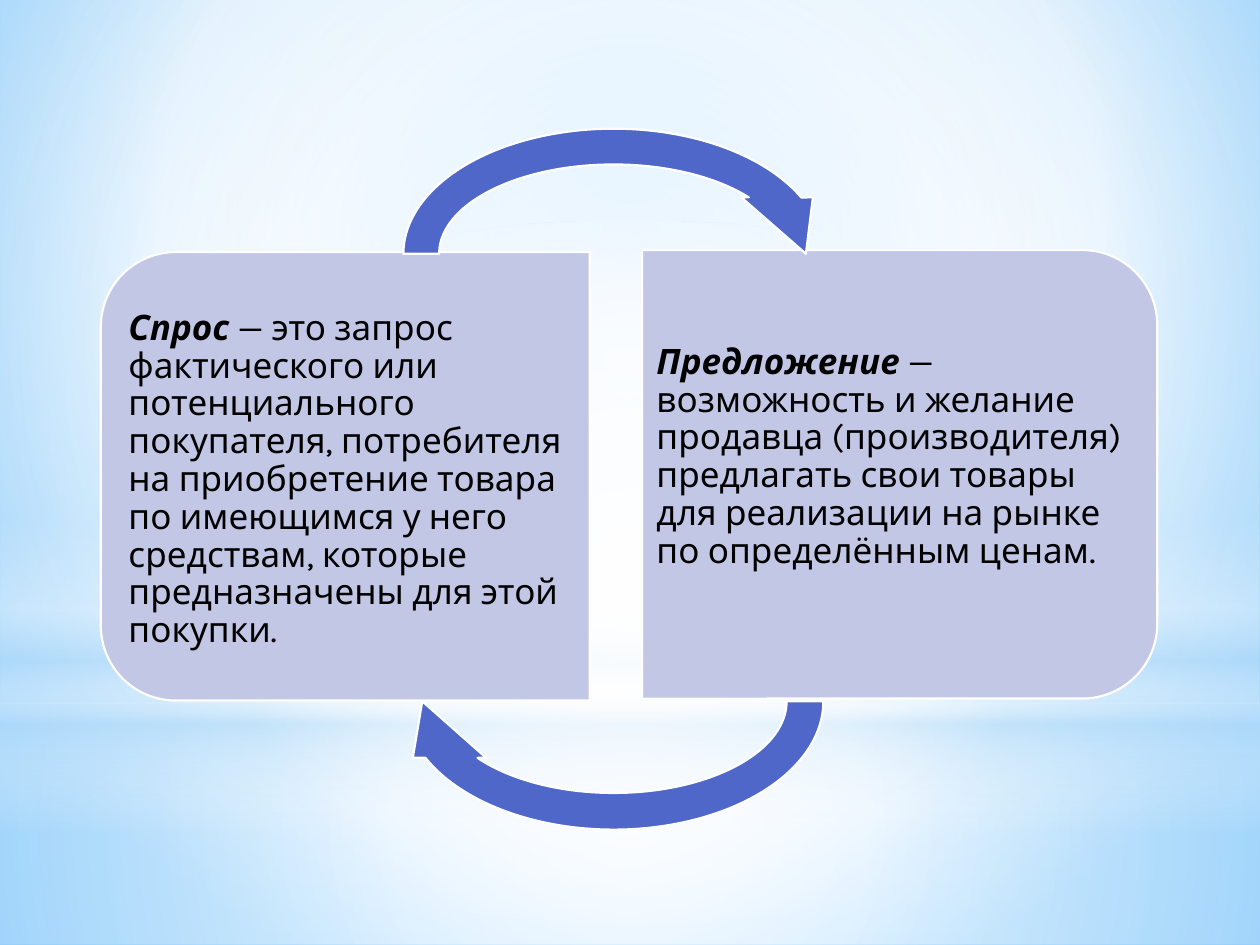
from dataclasses import dataclass

from lxml.etree import SubElement
from pptx import Presentation
from pptx.dml.color import RGBColor
from pptx.enum.shapes import MSO_SHAPE
from pptx.enum.text import MSO_ANCHOR, PP_ALIGN
from pptx.oxml.ns import qn
from pptx.util import Inches, Pt

COLUMNS, ROWS = 100, 75
CELL_WIDTH = Inches(10) / COLUMNS
CELL_HEIGHT = Inches(7.5) / ROWS


@dataclass(frozen=True)
class Theme:
    font: str = "Karla"
    text_size: int = 20
    text: str = "000000"
    panel: str = "C2C7E6"
    arrow: str = "4E67C8"
    white: str = "FFFFFF"
    haze: str = "B4DCFA"
    sky: str = "9ED5FF"
    deep_sky: str = "5BB9FF"
    line_width: float = 1.25


THEME = Theme()
CENTER = (50, 50, 50, 50)


def grid_box(left, top, width, height):
    return (
        int(left * CELL_WIDTH),
        int(top * CELL_HEIGHT),
        int(width * CELL_WIDTH),
        int(height * CELL_HEIGHT),
    )


def apply_gradient(fill, owner, stops, focus=None):
    fill.gradient()
    gradient = next(owner.iter(qn("a:gradFill")))
    gradient.clear()
    stop_list = SubElement(gradient, qn("a:gsLst"))
    for position, color, opacity in stops:
        stop = SubElement(stop_list, qn("a:gs"), pos=str(position * 1000))
        shade = SubElement(stop, qn("a:srgbClr"), val=color)
        if opacity < 100:
            SubElement(shade, qn("a:alpha"), val=str(opacity * 1000))
    if focus is None:
        SubElement(gradient, qn("a:lin"), ang="5400000", scaled="0")
    else:
        circle = SubElement(gradient, qn("a:path"), path="circle")
        sides = {side: str(share * 1000) for side, share in zip("ltrb", focus)}
        SubElement(circle, qn("a:fillToRect"), **sides)


def add_glow(page, kind, place, stops, focus=CENTER):
    glow = page.shapes.add_shape(kind, *grid_box(*place))
    glow.shadow.inherit = False
    glow.line.fill.background()
    apply_gradient(glow.fill, glow._element, stops, focus)


def add_outlined(group, kind, place, color, rotation, adjustments):
    shape = group.shapes.add_shape(kind, *grid_box(*place))
    shape.shadow.inherit = False
    shape.rotation = rotation
    shape.fill.solid()
    shape.fill.fore_color.rgb = RGBColor.from_string(color)
    shape.line.color.rgb = RGBColor.from_string(THEME.white)
    shape.line.width = Pt(THEME.line_width)
    for index, value in enumerate(adjustments):
        shape.adjustments[index] = value


def add_panel(group, place, rotation):
    add_outlined(group, MSO_SHAPE.ROUND_2_SAME_RECTANGLE, place, THEME.panel, rotation, (0.167, 0))


def add_arrow(group, place, rotation):
    angles = (0.125, 11.42, 204.58, 108, 0.125)
    add_outlined(group, MSO_SHAPE.CIRCULAR_ARROW, place, THEME.arrow, rotation, angles)


def add_definition(group, place, margins, term, meaning):
    box = group.shapes.add_textbox(*grid_box(*place))
    frame = box.text_frame
    frame.word_wrap = True
    frame.vertical_anchor = MSO_ANCHOR.TOP
    frame.margin_left, frame.margin_top, frame.margin_right, frame.margin_bottom = map(Inches, margins)
    para = frame.paragraphs[0]
    para.alignment = PP_ALIGN.LEFT
    para.line_spacing = 0.9
    for words, emphasis in ((term, True), (meaning, False)):
        span = para.add_run()
        span.text = words
        span.font.name = THEME.font
        span.font.size = Pt(THEME.text_size)
        span.font.color.rgb = RGBColor.from_string(THEME.text)
        span.font.bold = span.font.italic = emphasis


def add_backdrop(page):
    white, haze = THEME.white, THEME.haze
    sky = [(0, THEME.sky, 100), (60, white, 100), (100, THEME.deep_sky, 100)]
    apply_gradient(page.background.fill, page._element, sky, (20, 10, 20, 60))
    horizon = 55.8
    add_glow(page, MSO_SHAPE.RECTANGLE, (0, horizon, COLUMNS, ROWS - horizon),
             [(0, white, 91), (37, white, 76), (100, haze, 79)])
    add_glow(page, MSO_SHAPE.RECTANGLE, (0, 0, COLUMNS, horizon),
             [(0, white, 89), (48, white, 62), (100, haze, 79)])
    add_glow(page, MSO_SHAPE.RECTANGLE, (0, 41.2, COLUMNS, 25),
             [(0, white, 0), (29, white, 30), (45, haze, 40),
              (55, white, 26), (65, haze, 60), (100, white, 0)], None)
    add_glow(page, MSO_SHAPE.OVAL, (0, 17.5, COLUMNS, horizon),
             [(0, white, 100), (56, white, 0)])


def add_cycle(page):
    group = page.shapes.add_group_shape()
    add_panel(group, (9.6, 18.4, 35.6, 38.8), 270)
    add_definition(
        group, (9.8, 21.8, 37, 32.1), (0.04, 0.28, 0.06, 0.07), "Спрос",
        " — это запрос фактического или потенциального покупателя, потребителя "
        "на приобретение товара по имеющимся у него средствам, которые "
        "предназначены для этой покупки.")
    add_panel(group, (53.6, 17.2, 35.6, 40.9), 90)
    add_definition(
        group, (50.9, 21.6, 39.2, 32.1), (0.12, 0.57, 0.08, 0.14), "Предложение",
        " — возможность и желание продавца (производителя) предлагать свои "
        "товары для реализации на рынке по определённым ценам.")
    add_arrow(group, (30.6, 8.8, 36.2, 22.7), 0)
    add_arrow(group, (30.6, 44, 36.2, 23.3), 180)


def main():
    deck = Presentation()
    deck.slide_width, deck.slide_height = Inches(10), Inches(7.5)
    page = deck.slides.add_slide(deck.slide_layouts[6])
    add_backdrop(page)
    add_cycle(page)
    deck.save("out.pptx")


if __name__ == "__main__":
    main()
